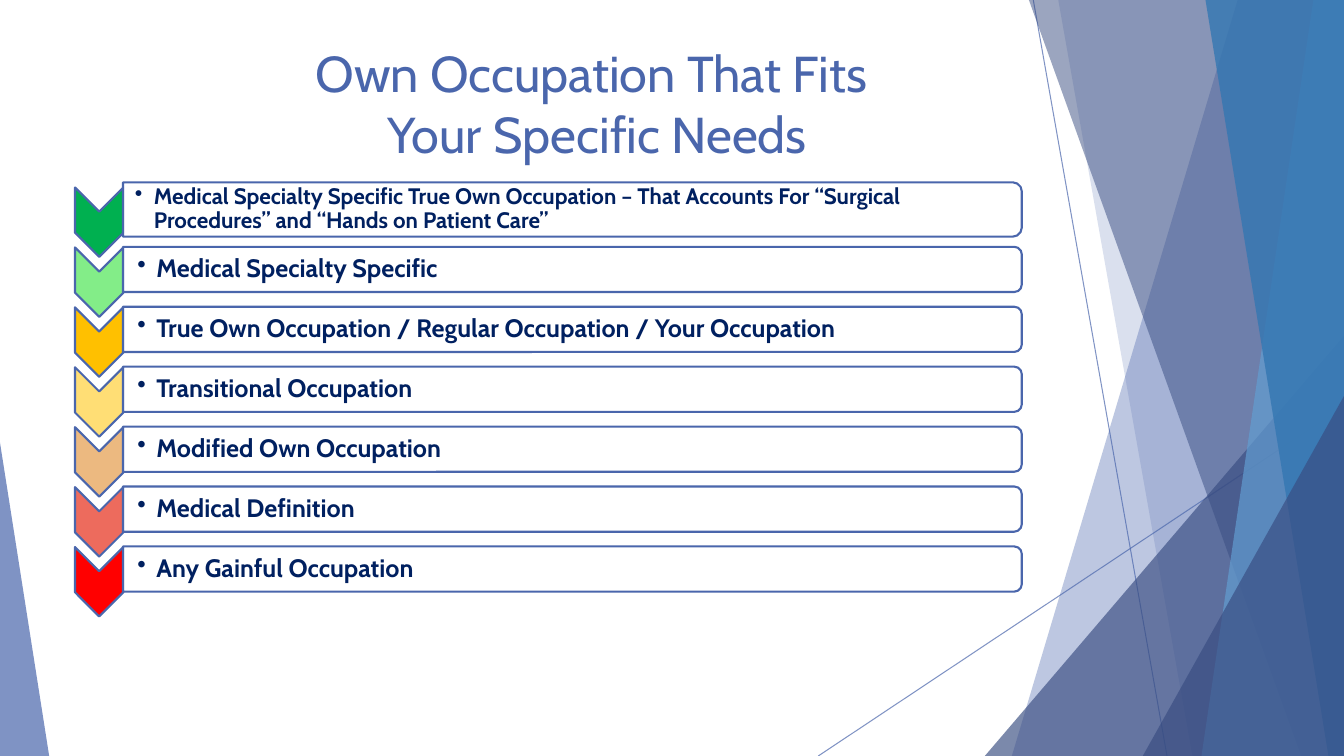
from lxml.etree import SubElement
from pptx import Presentation
from pptx.dml.color import RGBColor
from pptx.enum.shapes import MSO_CONNECTOR, MSO_SHAPE
from pptx.enum.text import MSO_ANCHOR, MSO_AUTO_SIZE, PP_ALIGN
from pptx.oxml.ns import qn
from pptx.util import Cm, Pt

# Content
TITLE = "Own Occupation That Fits \vYour Specific Needs"
DEFINITIONS = [  # text, chevron colour
    ("Medical Specialty Specific True Own Occupation – That Accounts For "
     "“Surgical Procedures” and “Hands on Patient Care”", "00B050"),
    ("Medical Specialty Specific", "83ED88"),
    ("True Own Occupation / Regular Occupation / Your Occupation", "FFC000"),
    ("Transitional Occupation", "FFDE75"),
    ("Modified Own Occupation", "ECB980"),
    ("Medical Definition", "ED6B5D"),
    ("Any Gainful Occupation", "FF0000"),
]
FONT, BLUE, NAVY, DARK = "Cabin", "4A66AC", "002060", "384C81"

# Background decoration, in centimetres
WIDTH, HEIGHT = 33.87, 19.05
RAYS = [((26.04, 0), (29.41, HEIGHT)), ((WIDTH, 10.24), (20.62, HEIGHT))]
PANELS = [  # corner points, colour, opacity in percent
    ([(31.19, 0), (WIDTH, 0), (WIDTH, HEIGHT), (25.5, HEIGHT)], BLUE, 36),
    ([(26.67, 0), (WIDTH, 0), (WIDTH, HEIGHT), (30.05, HEIGHT)], BLUE, 20),
    ([(WIDTH, 8.46), (WIDTH, HEIGHT), (24.82, HEIGHT)], DARK, 66),
    ([(25.93, 0), (WIDTH, 0), (WIDTH, HEIGHT), (32.79, HEIGHT)], DARK, 50),
    ([(33.1, 0), (WIDTH, 0), (WIDTH, HEIGHT), (30.28, HEIGHT)], "629DD1", 70),
    ([(30.38, 0), (WIDTH, 0), (WIDTH, HEIGHT), (33.48, HEIGHT)], "3477B2", 80),
    ([(WIDTH, 9.98), (WIDTH, HEIGHT), (28.8, HEIGHT)], DARK, 66),
    ([(0, 11.15), (1.24, HEIGHT), (0, HEIGHT)], BLUE, 70),
]

# Row geometry, in centimetres
ROW_PITCH = 1.51
CHEVRON_X, CHEVRON_Y, CHEVRON_LENGTH, CHEVRON_THICK = 2.5, 5.6, 1.75, 1.22
BAR_LEFT, BAR_Y, BAR_LENGTH = 3.1, 5.28, 22.65


def color(value):
    return RGBColor.from_string(value)


def set_opacity(color_format_owner, percent):
    """Add an alpha value to the solid colour inside a fill or line element."""
    rgb = next(color_format_owner.iter(qn("a:srgbClr")))
    SubElement(rgb, qn("a:alpha"), val=str(percent * 1000))


def fill_shape(shape, fill, opacity=100):
    shape.shadow.inherit = False
    shape.fill.solid()
    shape.fill.fore_color.rgb = color(fill)
    if opacity < 100:
        set_opacity(shape._element.spPr, opacity)


def add_ray(slide, start, end):
    ray = slide.shapes.add_connector(
        MSO_CONNECTOR.STRAIGHT, *(Cm(value) for value in start + end))
    ray.line.color.rgb = color(BLUE)
    ray.line.width = Pt(0.75)
    set_opacity(ray._element.spPr, 70)
    SubElement(ray._element.spPr, qn("a:effectLst"))


def add_panel(slide, points, fill, opacity):
    corners = [(Cm(x), Cm(y)) for x, y in points]
    builder = slide.shapes.build_freeform(*corners[0])
    builder.add_line_segments(corners[1:], close=True)
    panel = builder.convert_to_shape()
    fill_shape(panel, fill, opacity)
    panel.line.fill.background()


def add_turned_shape(slide, kind, center_x, center_y, length, thick, fill, opacity=100):
    """Place a shape by its centre and turn it a quarter clockwise."""
    width, height = (length, thick) if kind == MSO_SHAPE.CHEVRON else (thick, length)
    shape = slide.shapes.add_shape(
        kind, Cm(center_x - width / 2), Cm(center_y - height / 2), Cm(width), Cm(height))
    shape.rotation = 90
    fill_shape(shape, fill, opacity)
    shape.line.color.rgb = color(BLUE)
    shape.line.width = Pt(1.5)


def add_bullet_text(slide, text, center_y, height, size, inset):
    box = slide.shapes.add_textbox(
        Cm(BAR_LEFT), Cm(center_y - height / 2), Cm(BAR_LENGTH - 0.06), Cm(height))
    frame = box.text_frame
    frame.word_wrap = True
    frame.vertical_anchor = MSO_ANCHOR.MIDDLE
    frame.margin_left = Cm(inset)
    frame.margin_top = frame.margin_right = frame.margin_bottom = Cm(0.03)
    paragraph = frame.paragraphs[0]
    paragraph.text = text
    paragraph.line_spacing = 0.9
    paragraph.font.name, paragraph.font.size = FONT, Pt(size)
    paragraph.font.bold = True
    paragraph.font.color.rgb = color(NAVY)
    properties = paragraph._p.get_or_add_pPr()
    properties.set("marL", str(Cm(0.48)))
    properties.set("indent", str(-Cm(0.48)))
    bullet = properties.makeelement(qn("a:buChar"), {"char": "•"})
    properties.find(qn("a:lnSpc")).addnext(bullet)


def main():
    presentation = Presentation()
    presentation.slide_width, presentation.slide_height = Cm(WIDTH), Cm(HEIGHT)
    slide = presentation.slides.add_slide(presentation.slide_layouts[5])

    # Background
    for start, end in RAYS:
        add_ray(slide, start, end)
    for points, fill, opacity in PANELS:
        add_panel(slide, points, fill, opacity)

    # Title
    title = slide.shapes.title
    title.left, title.top, title.width, title.height = Cm(1.88), Cm(0.94), Cm(26.34), Cm(3.66)
    title.text_frame.text = TITLE
    title.text_frame.auto_size = MSO_AUTO_SIZE.NONE
    title.text_frame.vertical_anchor = MSO_ANCHOR.TOP
    paragraph = title.text_frame.paragraphs[0]
    paragraph.alignment = PP_ALIGN.CENTER
    paragraph.font.name, paragraph.font.size = FONT, Pt(36)
    paragraph.font.color.rgb = color(BLUE)

    # Definitions, from strongest to weakest; the first one takes two lines
    for index, (text, fill) in enumerate(DEFINITIONS):
        offset = index * ROW_PITCH
        thick, size, inset = (1.37, 16, 0.3) if index == 0 else (1.14, 18, 0.36)
        add_turned_shape(slide, MSO_SHAPE.CHEVRON, CHEVRON_X, CHEVRON_Y + offset,
                         CHEVRON_LENGTH, CHEVRON_THICK, fill)
        add_turned_shape(slide, MSO_SHAPE.ROUND_2_SAME_RECTANGLE, BAR_LEFT + BAR_LENGTH / 2,
                         BAR_Y + offset, BAR_LENGTH, thick, "FFFFFF", 90)
        add_bullet_text(slide, text, BAR_Y + offset, thick - 0.12, size, inset)

    presentation.save("out.pptx")


if __name__ == "__main__":
    main()
